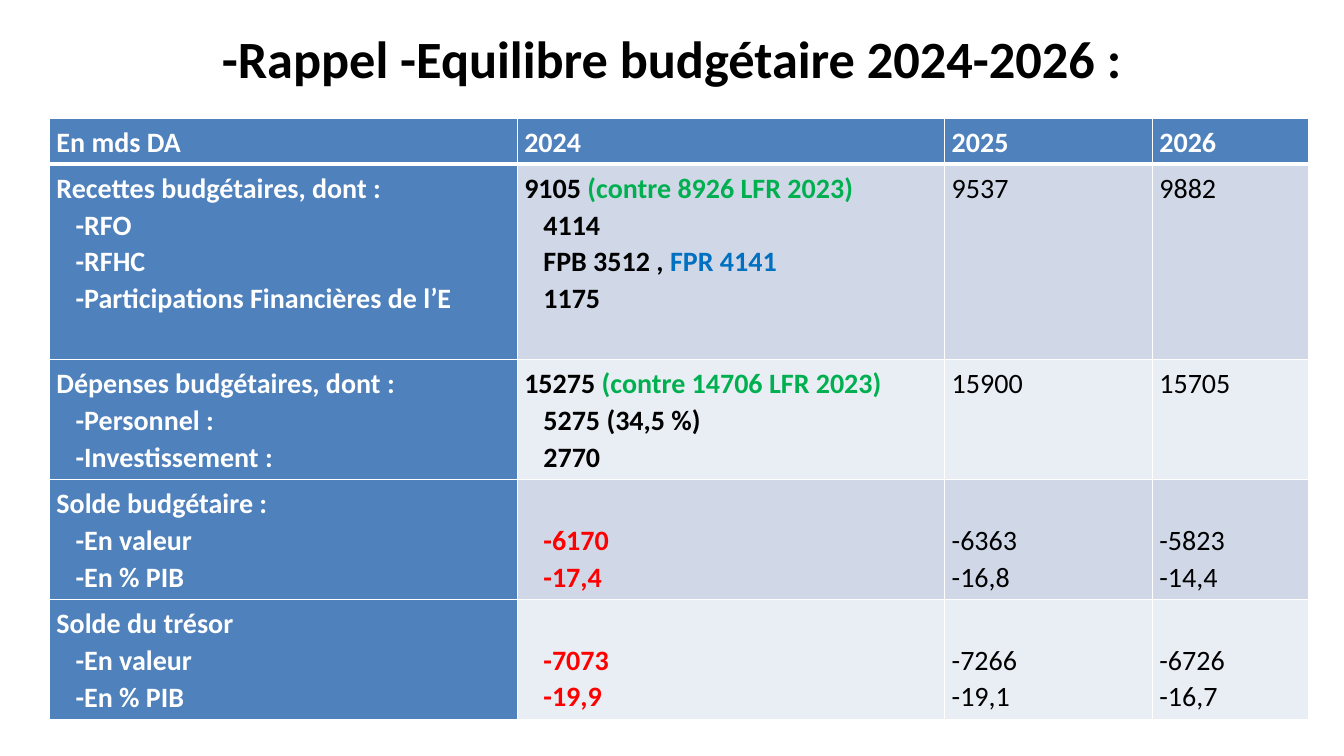
from lxml.etree import SubElement
from pptx import Presentation
from pptx.dml.color import RGBColor
from pptx.enum.text import MSO_ANCHOR as Anchor, PP_ALIGN as Align
from pptx.oxml.ns import qn
from pptx.util import Inches, Pt

COLORS = {
    "black": "000000", "white": "FFFFFF", "green": "00B050", "blue": "0070C0",
    "red": "FF0000", "header": "4F81BD", "band_dark": "D0D8E8", "band_light": "E9EDF4",
}
FONT = "Calibri"
TITLE = "-Rappel -Equilibre budgétaire 2024-2026 :"
YEARS = ["En mds DA", "2024", "2025", "2026"]

# Each cell is (head line, detail lines); a line is a string or a list of (text, colour) runs.
BUDGET = [
    [("Recettes budgétaires, dont :", ["-RFO", "-RFHC", "-Participations Financières de l’E"]),
     ([("9105 ", "black"), ("(contre 8926 LFR 2023)", "green")],
      ["4114", [("FPB 3512 , ", "black"), ("FPR 4141", "blue")], "1175"]),
     ("9537", []), ("9882", [])],
    [("Dépenses budgétaires, dont :", ["-Personnel :", "-Investissement :"]),
     ([("15275 ", "black"), ("(contre 14706 LFR 2023)", "green")], ["5275 (34,5 %)", "2770"]),
     ("15900", []), ("15705", [])],
    [("Solde budgétaire :", ["-En valeur", "-En % PIB"]),
     (None, [[("-6170", "red")], [("-17,4", "red")]]),
     (None, ["-6363", "-16,8"]), (None, ["-5823", "-14,4"])],
    [("Solde du trésor", ["-En valeur", "-En % PIB"]),
     (None, [[("-7073", "red")], [("-19,9", "red")]]),
     (None, ["-7266", "-19,1"]), (None, ["-6726", "-16,7"])],
]
COLUMN_WIDTHS = [4.64, 4.24, 2.06, 1.55]
ROW_HEIGHTS = [0.46, 1.94, 1.19, 1.19, 1.19]
THIN, THICK = 0.96, 3


def rgb(name):
    return RGBColor.from_string(COLORS[name])


def write_line(paragraph, line, size=20, color="black", bold=True,
               align=Align.JUSTIFY, spacing=1.07, indent=0):
    """Fill a paragraph with a string or with (text, colour) runs."""
    paragraph.alignment = align
    paragraph.line_spacing = spacing
    if indent:
        paragraph._p.get_or_add_pPr().set("marL", str(Inches(indent)))
    for text, run_color in [(line, color)] if isinstance(line, str) else line:
        run = paragraph.add_run()
        run.text = text
        run.font.name, run.font.size, run.font.bold = FONT, Pt(size), bold
        run.font.color.rgb = rgb(run_color)


def set_borders(cell, top, bottom):
    properties = cell._tc.get_or_add_tcPr()
    for side, width in (("L", THIN), ("R", THIN), ("T", top), ("B", bottom)):
        border = SubElement(properties, qn(f"a:ln{side}"), w=str(Pt(width)))
        fill = SubElement(border, qn("a:solidFill"))
        SubElement(fill, qn("a:srgbClr"), val=COLORS["white"])


def fill_cell(cell, row, column, head, details):
    on_header = row == 0 or column == 0
    set_borders(cell, THICK if row == 1 else THIN, THICK if row == 0 else THIN)
    cell.fill.solid()
    cell.fill.fore_color.rgb = rgb(
        "header" if on_header else "band_dark" if row % 2 else "band_light")
    cell.margin_left = cell.margin_right = Inches(0.07)
    cell.margin_top = cell.margin_bottom = Inches(0.05)
    cell.vertical_anchor = Anchor.TOP if head else Anchor.BOTTOM

    lines = [(head, 0)] if head else []
    lines += [(detail, 0.19 if column < 2 else 0) for detail in details]
    frame = cell.text_frame
    for number, (line, indent) in enumerate(lines):
        paragraph = frame.add_paragraph() if number else frame.paragraphs[0]
        write_line(paragraph, line, color="white" if on_header else "black",
                   bold=on_header or column == 1, indent=indent)


def main():
    deck = Presentation()
    deck.slide_width, deck.slide_height = Inches(13.33), Inches(7.5)
    slide = deck.slides.add_slide(deck.slide_layouts[6])

    title = slide.shapes.add_textbox(
        Inches(0.67), Inches(0.26), Inches(12), Inches(0.64)).text_frame
    title.word_wrap = True
    title.margin_top = title.margin_bottom = 0
    write_line(title.paragraphs[0], TITLE, size=37.4, align=Align.CENTER, spacing=1)

    rows = [[(year, []) for year in YEARS]] + BUDGET
    table = slide.shapes.add_table(
        len(rows), len(YEARS), Inches(0.49), Inches(1.17),
        Inches(sum(COLUMN_WIDTHS)), Inches(sum(ROW_HEIGHTS))).table
    for column, width in zip(table.columns, COLUMN_WIDTHS):
        column.width = Inches(width)
    for row, height in zip(table.rows, ROW_HEIGHTS):
        row.height = Inches(height)
    for r, cells in enumerate(rows):
        for c, (head, details) in enumerate(cells):
            fill_cell(table.cell(r, c), r, c, head, details)

    deck.save("out.pptx")


if __name__ == "__main__":
    main()
